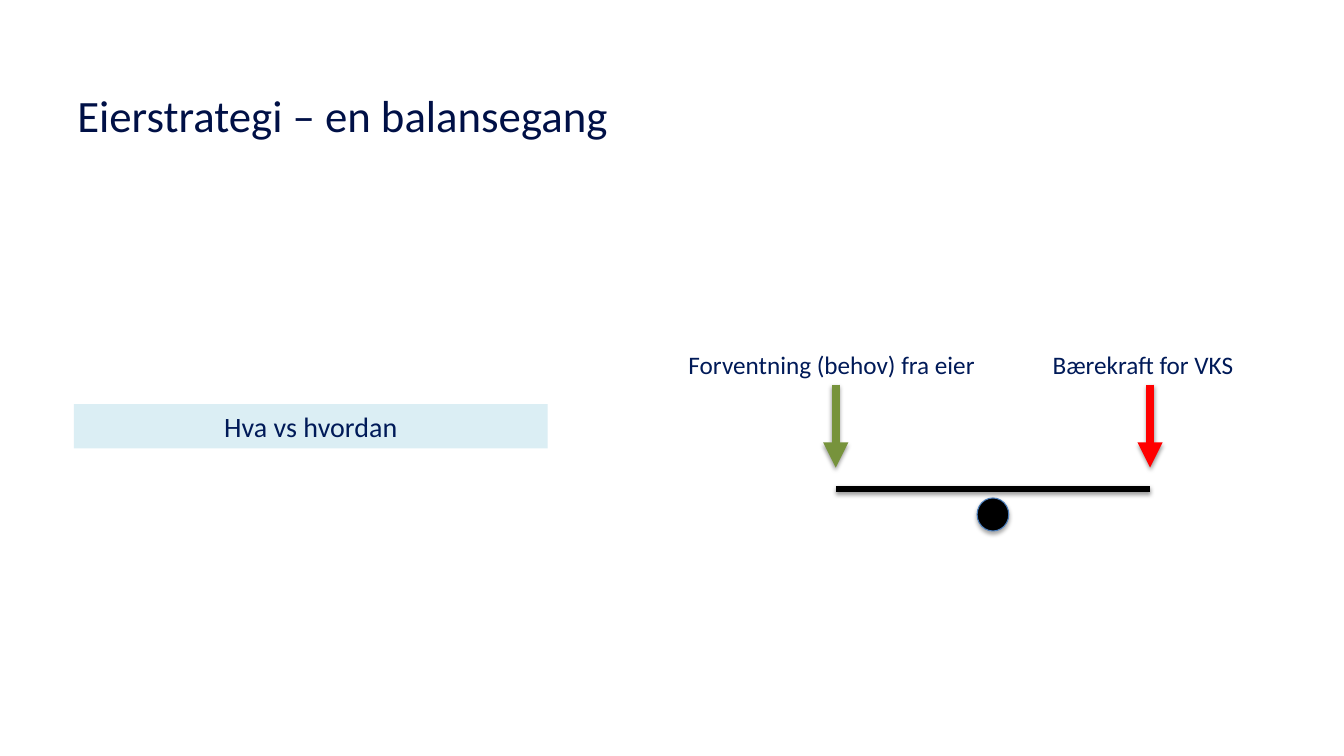
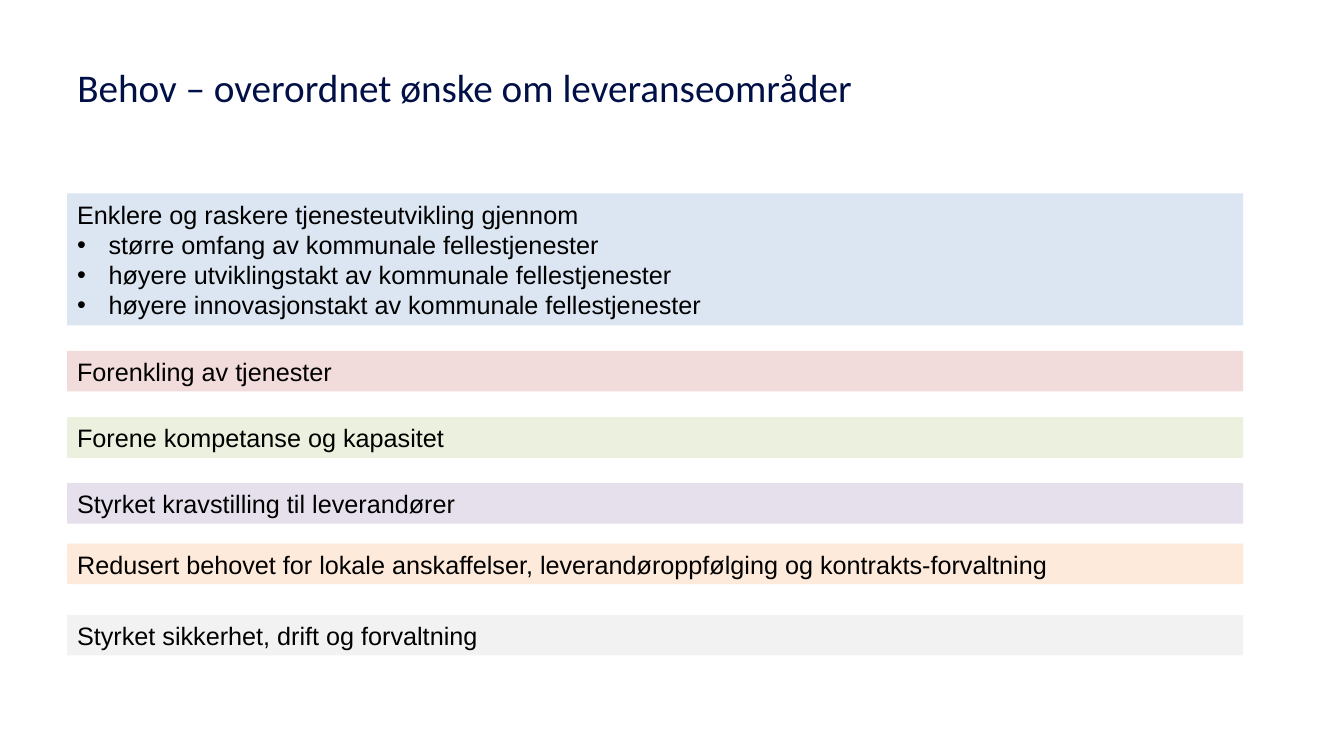
"""Build two slides on owner strategy: a balance diagram and a list of delivery areas."""
from lxml import etree
from pptx import Presentation
from pptx.dml.color import RGBColor
from pptx.enum.shapes import MSO_CONNECTOR, MSO_SHAPE
from pptx.enum.text import MSO_ANCHOR, PP_ALIGN
from pptx.oxml import parse_xml
from pptx.oxml.ns import nsdecls, qn
from pptx.util import Pt

STRAIGHT = MSO_CONNECTOR.STRAIGHT
RECTANGLE = MSO_SHAPE.RECTANGLE
OVAL = MSO_SHAPE.OVAL
LEFT = PP_ALIGN.LEFT
CENTER = PP_ALIGN.CENTER
MIDDLE = MSO_ANCHOR.MIDDLE
BOTTOM_SIDE = 2
TITLE_COLOR = "001046"
LABEL_COLOR = "001A58"
BLACK = "000000"


def color(value):
    return RGBColor.from_string(value)


def write(box, text, font="Arial", size=18, ink=BLACK, align=LEFT, bullets_from=None):
    frame = box.text_frame
    frame.word_wrap = True
    frame.vertical_anchor = MIDDLE
    for index, line in enumerate(text.split("\n")):
        para = frame.paragraphs[0] if index == 0 else frame.add_paragraph()
        para.alignment = align
        if bullets_from is not None and index >= bullets_from:
            properties = para._p.get_or_add_pPr()
            properties.set("marL", str(Pt(22.5)))
            properties.set("indent", str(-Pt(22.5)))
            etree.SubElement(properties, qn("a:buFont"), typeface="Arial")
            etree.SubElement(properties, qn("a:buChar"), char="•")
        span = para.add_run()
        span.text = line
        span.font.name = font
        span.font.size = Pt(size)
        span.font.color.rgb = color(ink)


deck = Presentation()
deck.slide_width = Pt(960)
deck.slide_height = Pt(540)

pages = []
for heading, top, size in [
    ("Eierstrategi – en balansegang", 37.4, 32),
    ("Behov – overordnet ønske om leveranseområder", 17.3, 28),
]:
    page = deck.slides.add_slide(deck.slide_layouts[5])
    title = page.shapes.title
    title.left, title.top, title.width, title.height = Pt(48), Pt(top), Pt(864), Pt(89.3)
    write(title, heading, font="Calibri", size=size, ink=TITLE_COLOR)
    pages.append(page)
balance_page, needs_page = pages

bands = [
    (balance_page, 52.8, 288.7, 338.4, 31.7, "DBEEF4", "Hva vs hvordan",
     {"font": "Calibri", "size": 20, "ink": LABEL_COLOR, "align": CENTER}),
    (needs_page, 48, 138.2, 840, 94.3, "DCE6F2",
     "Enklere og raskere tjenesteutvikling gjennom\n"
     "større omfang av kommunale fellestjenester\n"
     "høyere utviklingstakt av kommunale fellestjenester\n"
     "høyere innovasjonstakt av kommunale fellestjenester",
     {"bullets_from": 1}),
]
for top, fill, text in [
    (250.6, "F2DCDB", "Forenkling av tjenester"),
    (298, "EBF1DE", "Forene kompetanse og kapasitet"),
    (345, "E6E0EC", "Styrket kravstilling til leverandører"),
    (388.3, "FDEADA", "Redusert behovet for lokale anskaffelser, "
                      "leverandøroppfølging og kontrakts-forvaltning"),
    (439.2, "F2F2F2", "Styrket sikkerhet, drift og forvaltning"),
]:
    bands.append((needs_page, 48, top, 840, 29, fill, text, {}))

for page, left, top, width, height, fill, text, style in bands:
    band = page.shapes.add_shape(RECTANGLE, Pt(left), Pt(top), Pt(width), Pt(height))
    band.shadow.inherit = False
    band.fill.solid()
    band.fill.fore_color.rgb = color(fill)
    band.line.fill.background()
    write(band, text, **style)

shapes = balance_page.shapes
left_end, right_end, beam_top = 597, 821.5, 349.2
beam = shapes.add_connector(STRAIGHT, Pt(left_end), Pt(beam_top), Pt(right_end), Pt(beam_top))
beam.line.color.rgb = color(BLACK)
beam.line.width = Pt(4.5)

pivot_width = 22.6
pivot_left = (left_end + right_end - pivot_width) / 2
pivot = shapes.add_shape(OVAL, Pt(pivot_left), Pt(355.7), Pt(pivot_width), Pt(23.6))
pivot.fill.solid()
pivot.fill.fore_color.rgb = color(BLACK)
pivot.line.color.rgb = color("4B7EBC")
pivot.line.width = Pt(0.75)

shadowed = [(beam, 38, 1.6), (pivot, 35, 1.8)]
for center, width, text, arrow_color in [
    (left_end, 224.6, "Forventning (behov) fra eier", "77933C"),
    (right_end, 153.4, "Bærekraft for VKS", "FF0000"),
]:
    label = shapes.add_textbox(Pt(center - width / 2), Pt(245.7), Pt(width), Pt(29))
    write(label, text, font="Calibri", ink=LABEL_COLOR)
    arrow = shapes.add_connector(STRAIGHT, Pt(center), Pt(274.7), Pt(center), Pt(334))
    arrow.begin_connect(label, BOTTOM_SIDE)
    arrow.line.color.rgb = color(arrow_color)
    arrow.line.width = Pt(6)
    etree.SubElement(arrow.line._get_or_add_ln(), qn("a:tailEnd"), type="triangle")
    shadowed.append((arrow, 38, 1.6))

for shape, opacity, distance in shadowed:
    shape._element.spPr.append(parse_xml(
        f'<a:effectLst {nsdecls("a")}>'
        f'<a:outerShdw blurRad="{Pt(3.1)}" dist="{Pt(distance)}" dir="5400000" rotWithShape="0">'
        f'<a:srgbClr val="{BLACK}"><a:alpha val="{opacity * 1000}"/></a:srgbClr>'
        '</a:outerShdw></a:effectLst>'))

deck.save("out.pptx")
